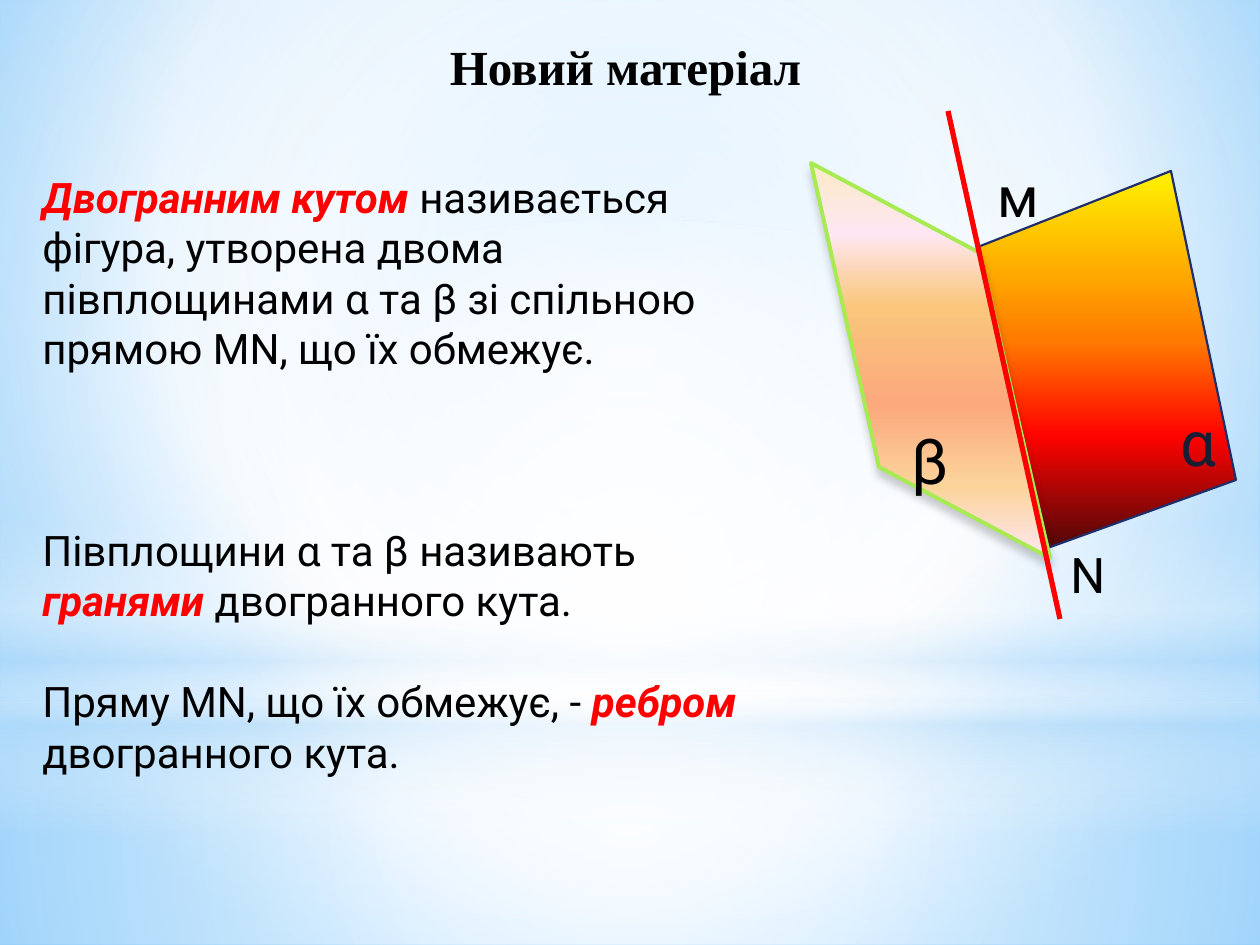
from typing import NamedTuple

from lxml.etree import SubElement
from pptx import Presentation
from pptx.dml.color import RGBColor
from pptx.enum.shapes import MSO_CONNECTOR, MSO_SHAPE
from pptx.enum.text import MSO_ANCHOR, MSO_AUTO_SIZE, PP_ALIGN
from pptx.oxml import parse_xml
from pptx.oxml.ns import nsdecls, qn
from pptx.util import Emu, Pt

EMU_PER_PX = 914400 / 126
BLACK = RGBColor(0x00, 0x00, 0x00)
RED = RGBColor(0xFF, 0x00, 0x00)
NAVY = RGBColor(0x1F, 0x2E, 0x69)
INK = RGBColor(0x19, 0x1D, 0x34)
LIME = RGBColor(0xA7, 0xEA, 0x52)
WHITE = RGBColor(0xFF, 0xFF, 0xFF)
SKY = RGBColor(0xB4, 0xDC, 0xFA)
PALE_BLUE = RGBColor(0x9E, 0xD5, 0xFF)
BRIGHT_BLUE = RGBColor(0x5B, 0xB9, 0xFF)
YELLOW = RGBColor(0xFF, 0xF2, 0x00)
ORANGE = RGBColor(0xFF, 0x7A, 0x00)
SCARLET = RGBColor(0xFF, 0x03, 0x00)
MAROON = RGBColor(0x4D, 0x08, 0x08)
CREAM = RGBColor(0xFB, 0xEA, 0xC7)
PINK = RGBColor(0xFE, 0xE7, 0xF2)
APRICOT = RGBColor(0xFA, 0xC7, 0x7D)
SALMON = RGBColor(0xFB, 0xA9, 0x7D)
PEACH = RGBColor(0xFB, 0xD4, 0x9C)
BODY_FONT, TITLE_FONT = "Roboto", "Times New Roman"


class Stop(NamedTuple):
    percent: int
    color: RGBColor
    opacity: int = 100


class Gradient(NamedTuple):
    """Runs from a focus rectangle (l, t, r, b percent), or downwards without one."""
    stops: list[Stop]
    focus: tuple[int, int, int, int] | None = None


class Glow(NamedTuple):
    preset: MSO_SHAPE
    top: int
    height: int
    gradient: Gradient


class Face(NamedTuple):
    corners: list[tuple[int, int]]
    gradient: Gradient
    edge_color: RGBColor
    edge_pt: float


class Label(NamedTuple):
    text: str
    left: int
    top: int
    size: int
    color: RGBColor = BLACK


class Statement(NamedTuple):
    space_before: float
    phrases: list[tuple[str, bool]]


CENTER = (50, 50, 50, 50)
BACKDROP = Gradient([Stop(0, PALE_BLUE), Stop(60, WHITE), Stop(100, BRIGHT_BLUE)],
                    (20, 10, 20, 60))
GLOWS = [
    Glow(MSO_SHAPE.RECTANGLE, 703, 242, Gradient(
        [Stop(0, WHITE, 91), Stop(37, WHITE, 76), Stop(100, SKY, 79)], CENTER)),
    Glow(MSO_SHAPE.RECTANGLE, 0, 703, Gradient(
        [Stop(0, WHITE, 89), Stop(48, WHITE, 62), Stop(100, SKY, 79)], CENTER)),
    Glow(MSO_SHAPE.RECTANGLE, 519, 315, Gradient(
        [Stop(0, WHITE, 0), Stop(29, WHITE, 30), Stop(45, SKY, 40),
         Stop(55, WHITE, 26), Stop(65, SKY, 60), Stop(100, WHITE, 0)])),
    Glow(MSO_SHAPE.OVAL, 220, 703, Gradient(
        [Stop(0, WHITE), Stop(56, WHITE, 0)], CENTER)),
]
ALPHA_FACE = Face(
    [(978, 247), (1045, 549), (1236, 480), (1171, 171)],
    Gradient([Stop(0, YELLOW), Stop(45, ORANGE), Stop(70, SCARLET), Stop(100, MAROON)]),
    NAVY, 1.25)
BETA_FACE = Face(
    [(980, 253), (811, 163), (879, 467), (1050, 558)],
    Gradient([Stop(0, CREAM), Stop(18, PINK), Stop(36, APRICOT),
              Stop(61, SALMON), Stop(82, PEACH), Stop(100, PINK)]),
    LIME, 2.25)
LABELS = [
    Label("α", 1168, 397, 36, INK),
    Label("β", 899, 415, 36),
    Label("м", 985, 155, 32),
    Label("N", 1058, 538, 28),
]
STATEMENTS = [
    Statement(0, [("Двогранним кутом ", True),
                  ("називається фігура, утворена двома півплощинами α та β "
                   "зі спільною прямою МN, що їх обмежує.", False)]),
    Statement(86.5, [("Півплощини α та β називають ", False), ("гранями ", True),
                     ("двогранного кута.", False)]),
    Statement(29, [("Пряму МN, що їх обмежує, - ", False), ("ребром", True),
                   (" двогранного кута.", False)]),
]


def px(length: int) -> Emu:
    return Emu(round(length * EMU_PER_PX))


def apply_gradient(fill, properties, gradient: Gradient) -> None:
    """Put the gradient in place of the fill held by the properties element."""
    fill.background()
    element = parse_xml(f'<a:gradFill {nsdecls("a")} rotWithShape="1"><a:gsLst/></a:gradFill>')
    for stop in gradient.stops:
        entry = SubElement(element[0], qn("a:gs"), pos=str(stop.percent * 1000))
        color = SubElement(entry, qn("a:srgbClr"), val=str(stop.color))
        if stop.opacity < 100:
            SubElement(color, qn("a:alpha"), val=str(stop.opacity * 1000))
    if gradient.focus:
        radial = SubElement(element, qn("a:path"), {"path": "circle"})
        sides = {side: str(share * 1000) for side, share in zip("ltrb", gradient.focus)}
        SubElement(radial, qn("a:fillToRect"), sides)
    else:
        SubElement(element, qn("a:lin"), ang="5400000", scaled="0")
    properties.replace(properties.find(qn("a:noFill")), element)


def draw_glow(slide, glow: Glow) -> None:
    shape = slide.shapes.add_shape(glow.preset, 0, px(glow.top), px(1260), px(glow.height))
    shape.shadow.inherit = False
    shape.line.fill.background()
    apply_gradient(shape.fill, shape._element.spPr, glow.gradient)


def draw_face(slide, face: Face):
    outline = slide.shapes.build_freeform(*face.corners[0], scale=EMU_PER_PX)
    outline.add_line_segments(face.corners[1:], close=True)
    shape = outline.convert_to_shape()
    shape.shadow.inherit = False
    shape.line.color.rgb = face.edge_color
    shape.line.width = Pt(face.edge_pt)
    apply_gradient(shape.fill, shape._element.spPr, face.gradient)
    return shape


def cast_shadow(shape) -> None:
    effects = shape._element.spPr.find(qn("a:effectLst"))
    shadow = SubElement(effects, qn("a:outerShdw"), blurRad=str(Pt(5)), dist=str(Pt(4)),
                        dir="5400000", rotWithShape="0")
    color = SubElement(shadow, qn("a:srgbClr"), val=str(BLACK))
    SubElement(color, qn("a:alpha"), val="20000")


def draw_edge(slide) -> None:
    edge = slide.shapes.add_connector(MSO_CONNECTOR.STRAIGHT,
                                      px(948), px(111), px(1060), px(619))
    edge.line.color.rgb = RED
    edge.line.width = Pt(3)
    SubElement(edge._element.spPr, qn("a:effectLst"))


def style(font, name: str, size: int, color: RGBColor) -> None:
    font.name, font.size, font.color.rgb = name, Pt(size), color


def draw_label(slide, label: Label) -> None:
    frame = slide.shapes.add_textbox(px(label.left), px(label.top), px(62), px(80)).text_frame
    frame.word_wrap = False
    frame.text = label.text
    style(frame.paragraphs[0].font, BODY_FONT, label.size, label.color)


def write_statements(slide) -> None:
    frame = slide.shapes.add_textbox(px(30), px(165), px(781), px(726)).text_frame
    frame.word_wrap = True
    for index, statement in enumerate(STATEMENTS):
        paragraph = frame.add_paragraph() if index else frame.paragraphs[0]
        style(paragraph.font, BODY_FONT, 24, BLACK)
        if index:
            paragraph.space_before = Pt(statement.space_before)
        for text, is_term in statement.phrases:
            run = paragraph.add_run()
            run.text = text
            if is_term:
                run.font.bold = run.font.italic = True
                run.font.color.rgb = RED


def write_title(slide) -> None:
    title = slide.shapes.title
    title.left, title.top, title.width, title.height = px(413), px(30), px(425), px(72)
    frame = title.text_frame
    frame.text = "Новий матеріал"
    frame.auto_size = MSO_AUTO_SIZE.NONE
    frame.vertical_anchor = MSO_ANCHOR.TOP
    heading = frame.paragraphs[0]
    heading.alignment = PP_ALIGN.CENTER
    style(heading.font, TITLE_FONT, 28, BLACK)
    heading.font.bold = True
    slide.shapes._spTree.append(title._element)  # in front of the glows


def main() -> None:
    deck = Presentation()
    deck.slide_width, deck.slide_height = px(1260), px(945)
    slide = deck.slides.add_slide(deck.slide_layouts[5])
    backdrop = slide.background.fill
    backdrop.background()
    apply_gradient(backdrop, slide._element.find(".//" + qn("p:bgPr")), BACKDROP)
    for glow in GLOWS:
        draw_glow(slide, glow)
    draw_face(slide, ALPHA_FACE)
    cast_shadow(draw_face(slide, BETA_FACE))
    draw_edge(slide)
    for label in LABELS:
        draw_label(slide, label)
    write_statements(slide)
    write_title(slide)
    deck.save("out.pptx")


if __name__ == "__main__":
    main()
